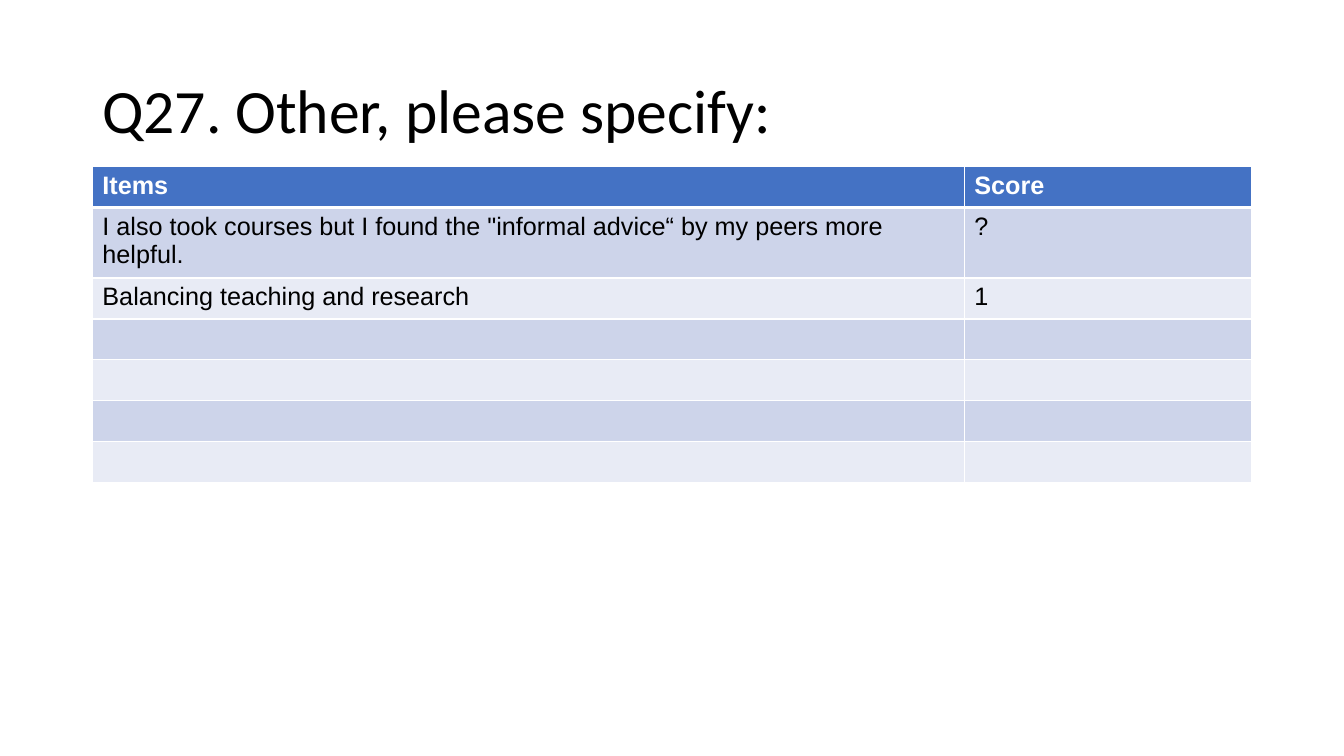
import dataclasses
import pptx
import pptx.dml.color
import pptx.enum.text
import pptx.oxml
import pptx.oxml.ns
import pptx.util

Pt = pptx.util.Pt


@dataclasses.dataclass(frozen=True)
class Theme:
    title_font: str = "Calibri"
    body_font: str = "Arial"
    title_size: float = 44
    body_size: float = 18
    ink: str = "000000"
    paper: str = "FFFFFF"
    header: str = "4472C4"
    bands: tuple = ("CDD4EA", "E8EBF5")
    rule: float = 1
    header_rule: float = 3


THEME = Theme()
QUESTION = "Q27. Other, please specify:"
ANSWERS = [
    ("Items", "Score"),
    ('I also took courses but I found the "informal advice“ by my peers more helpful.', "?"),
    ("Balancing teaching and research", "1"),
] + [("", "")] * 4


def style_font(paragraph, name, size, color, bold=False):
    paragraph.font.name = name
    paragraph.font.size = Pt(size)
    paragraph.font.bold = bold
    paragraph.font.color.rgb = pptx.dml.color.RGBColor.from_string(color)


def add_title(slide, left, top, width, height):
    title = slide.shapes.add_textbox(Pt(left), Pt(top), Pt(width), Pt(height))
    frame = title.text_frame
    frame.word_wrap = True
    frame.vertical_anchor = pptx.enum.text.MSO_ANCHOR.MIDDLE
    heading = frame.paragraphs[0]
    heading.text = QUESTION
    heading.line_spacing = 0.9
    style_font(heading, THEME.title_font, THEME.title_size, THEME.ink)


def add_borders(cell, top, bottom):
    properties = cell._tc.get_or_add_tcPr()
    widths = {"lnL": THEME.rule, "lnR": THEME.rule, "lnT": top, "lnB": bottom}
    for side, width in widths.items():
        properties.append(pptx.oxml.parse_xml(
            f'<a:{side} {pptx.oxml.ns.nsdecls("a")} w="{Pt(width)}"><a:solidFill>'
            f'<a:srgbClr val="{THEME.paper}"/></a:solidFill></a:{side}>'))


def fill_cell(cell, text, row):
    is_header = row == 0
    add_borders(cell,
                THEME.header_rule if row == 1 else THEME.rule,
                THEME.header_rule if is_header else THEME.rule)
    background = THEME.header if is_header else THEME.bands[(row - 1) % 2]
    cell.fill.solid()
    cell.fill.fore_color.rgb = pptx.dml.color.RGBColor.from_string(background)
    entry = cell.text_frame.paragraphs[0]
    if text:
        entry.text = text
    style_font(entry, THEME.body_font, THEME.body_size,
               THEME.paper if is_header else THEME.ink, is_header)


def add_answers(slide, left, top, width, height):
    answers = slide.shapes.add_table(
        len(ANSWERS), 2, Pt(left), Pt(top), Pt(width), Pt(height)).table
    score_width = 205.2
    answers.columns[0].width = Pt(width - score_width)
    answers.columns[1].width = Pt(score_width)
    for row, texts in enumerate(ANSWERS):
        answers.rows[row].height = Pt(height / len(ANSWERS))
        for column, text in enumerate(texts):
            fill_cell(answers.cell(row, column), text, row)


def main():
    deck = pptx.Presentation()
    deck.slide_width = Pt(960)
    deck.slide_height = Pt(540)
    slide = deck.slides.add_slide(deck.slide_layouts[6])
    add_title(slide, 66, 28.75, 828, 104.4)
    add_answers(slide, 66, 119, 828, 204.4)
    deck.save("out.pptx")


if __name__ == "__main__":
    main()
